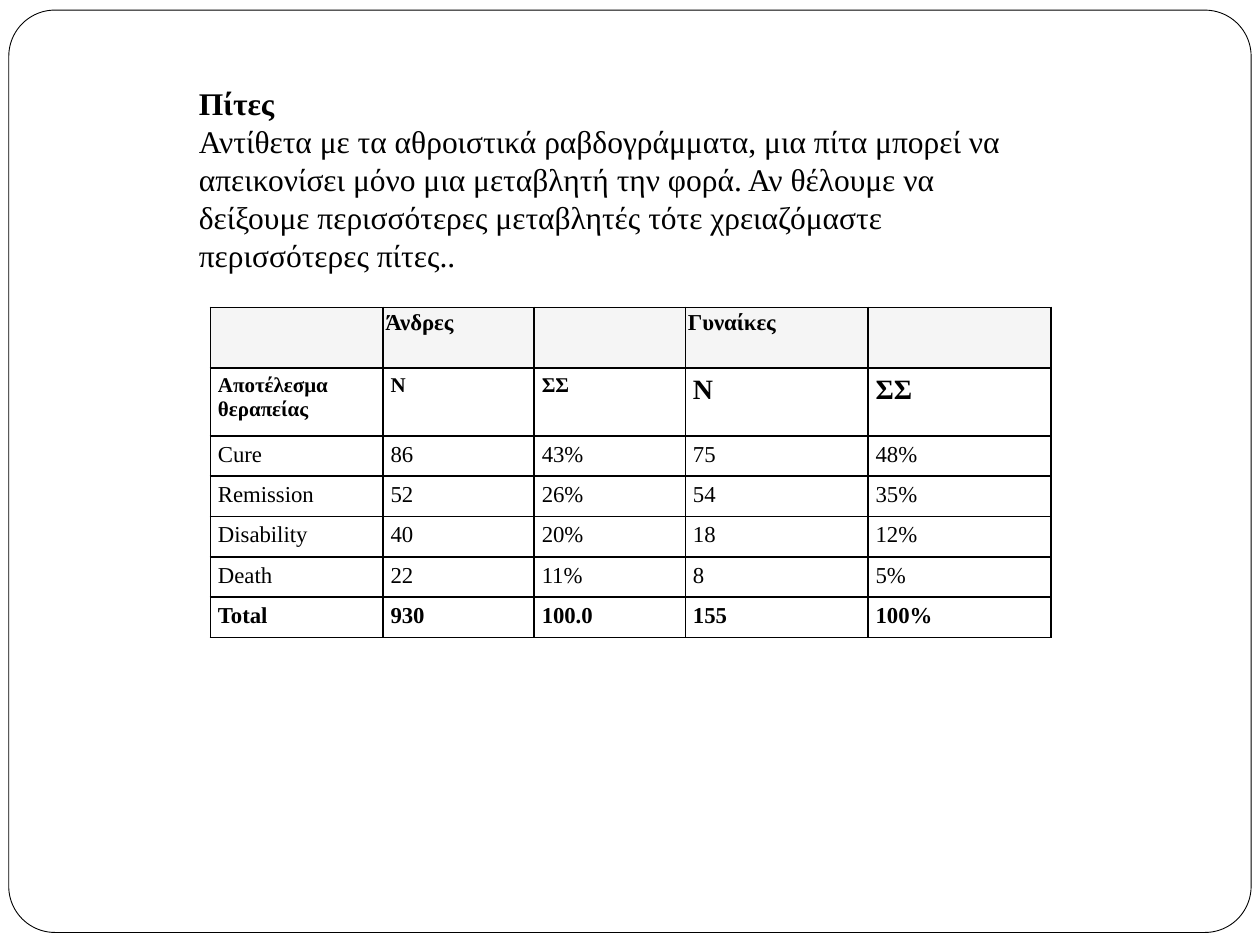
"""Build a slide on pie charts with a table of therapy outcomes by sex."""
from dataclasses import dataclass

from lxml import etree
from pptx import Presentation
from pptx.dml.color import RGBColor
from pptx.enum.shapes import MSO_SHAPE
from pptx.enum.text import MSO_AUTO_SIZE
from pptx.oxml.ns import qn
from pptx.util import Emu, Inches, Pt

ROUNDED = MSO_SHAPE.ROUNDED_RECTANGLE
GROW = MSO_AUTO_SIZE.SHAPE_TO_FIT_TEXT
SLIDE_WIDTH = Inches(10)
SLIDE_HEIGHT = Inches(7.5)
BORDER_SIDES = ("a:lnL", "a:lnR", "a:lnT", "a:lnB")


@dataclass(frozen=True)
class Theme:
    """Colours, font, type sizes and line widths of the slide."""
    ink: str = "000000"
    paper: str = "FFFFFF"
    header: str = "F5F5F5"
    font: str = "Times New Roman"
    body: float = 18
    cell: float = 13
    small: float = 12
    large: float = 16
    frame_line: float = 0.5
    border: float = 1


@dataclass(frozen=True)
class Area:
    """A rectangle in percent of the slide's width and height."""
    left: float
    top: float
    width: float
    height: float

    def lengths(self) -> tuple[Emu, Emu, Emu, Emu]:
        """Return left, top, width and height as lengths."""
        return (across(self.left), down(self.top),
                across(self.width), down(self.height))


@dataclass(frozen=True)
class Row:
    """A table row with its height in percent and its cell style."""
    height: float
    texts: tuple[str, ...]
    sizes: tuple[float, ...]
    bold: bool = False
    fill: str = "FFFFFF"
    side_inset: float = 0.06
    top_inset: float = 0.05


THEME = Theme()
FRAME = Area(0.7, 1.07, 98.6, 97.6)
INTRO = Area(14.8, 8.27, 66.4, 21.6)
TABLE = Area(16.7, 32.53, 66.7, 34.93)
COLUMNS = (13.7, 12, 12, 14.5, 14.5)
ROW_HEIGHT = 4.27
CELL_SIZES = (THEME.cell,) * len(COLUMNS)
HEADING_SIZES = (THEME.small,) * 3 + (THEME.large,) * 2
OUTCOMES = (
    ("Cure", "86", "43%", "75", "48%"),
    ("Remission", "52", "26%", "54", "35%"),
    ("Disability", "40", "20%", "18", "12%"),
    ("Death", "22", "11%", "8", "5%"),
)
ROWS = (
    Row(6.4, ("", "Άνδρες", "", "Γυναίκες", ""), CELL_SIZES, True,
        THEME.header, 0.02, 0.02),
    Row(7.2, ("Αποτέλεσμα θεραπείας", "Ν", "ΣΣ", "Ν", "ΣΣ"),
        HEADING_SIZES, True),
    *(Row(ROW_HEIGHT, texts, CELL_SIZES) for texts in OUTCOMES),
    Row(ROW_HEIGHT, ("Total", "930", "100.0", "155", "100%"),
        CELL_SIZES, True),
)
TITLE = "Πίτες"
EXPLANATION = (
    "Αντίθετα με τα αθροιστικά ραβδογράμματα, μια πίτα μπορεί να "
    "απεικονίσει μόνο μια μεταβλητή την φορά. Αν θέλουμε να δείξουμε "
    "περισσότερες μεταβλητές τότε χρειαζόμαστε περισσότερες πίτες.."
)


def across(percent: float) -> Emu:
    """Turn a percentage of the slide's width into a length."""
    return Emu(round(SLIDE_WIDTH * percent / 100))


def down(percent: float) -> Emu:
    """Turn a percentage of the slide's height into a length."""
    return Emu(round(SLIDE_HEIGHT * percent / 100))


def add_span(para, text: str, size: float, bold: bool) -> None:
    """Add one styled run to a paragraph."""
    span = para.add_run()
    span.text = text
    span.font.name = THEME.font
    span.font.size = Pt(size)
    span.font.bold = bold
    span.font.color.rgb = RGBColor.from_string(THEME.ink)


def add_frame(page) -> None:
    """Draw the rounded frame around the page."""
    frame = page.shapes.add_shape(ROUNDED, *FRAME.lengths())
    frame.adjustments[0] = 0.05
    frame.shadow.inherit = False
    frame.fill.solid()
    frame.fill.fore_color.rgb = RGBColor.from_string(THEME.paper)
    frame.line.color.rgb = RGBColor.from_string(THEME.ink)
    frame.line.width = Pt(THEME.frame_line)


def add_intro(page) -> None:
    """Write the title and the explanation."""
    box = page.shapes.add_textbox(*INTRO.lengths()).text_frame
    box.word_wrap = True
    box.auto_size = GROW
    add_span(box.paragraphs[0], TITLE, THEME.body, True)
    add_span(box.add_paragraph(), EXPLANATION, THEME.body, False)


def add_borders(cell) -> None:
    """Give all four sides of a cell a solid line."""
    properties = cell._tc.get_or_add_tcPr()
    for side in BORDER_SIDES:
        line = etree.SubElement(properties, qn(side), w=str(Pt(THEME.border)))
        fill = etree.SubElement(line, qn("a:solidFill"))
        etree.SubElement(fill, qn("a:srgbClr"), val=THEME.ink)


def fill_cell(cell, row: Row, text: str, size: float) -> None:
    """Style one cell and write its text."""
    add_borders(cell)
    cell.fill.solid()
    cell.fill.fore_color.rgb = RGBColor.from_string(row.fill)
    cell.margin_left = cell.margin_right = Inches(row.side_inset)
    cell.margin_top = cell.margin_bottom = Inches(row.top_inset)
    if text:
        add_span(cell.text_frame.paragraphs[0], text, size, row.bold)


def add_outcomes(page) -> None:
    """Draw the table of outcomes."""
    table = page.shapes.add_table(
        len(ROWS), len(COLUMNS), *TABLE.lengths()).table
    table.first_row = table.horz_banding = False
    for column, width in zip(table.columns, COLUMNS):
        column.width = across(width)
    for table_row, row in zip(table.rows, ROWS):
        table_row.height = down(row.height)
        for cell, text, size in zip(table_row.cells, row.texts, row.sizes):
            fill_cell(cell, row, text, size)


def main() -> None:
    """Build and save the deck."""
    deck = Presentation()
    deck.slide_width, deck.slide_height = SLIDE_WIDTH, SLIDE_HEIGHT
    page = deck.slides.add_slide(deck.slide_layouts[6])
    add_frame(page)
    add_intro(page)
    add_outcomes(page)
    deck.save("out.pptx")


if __name__ == "__main__":
    main()
